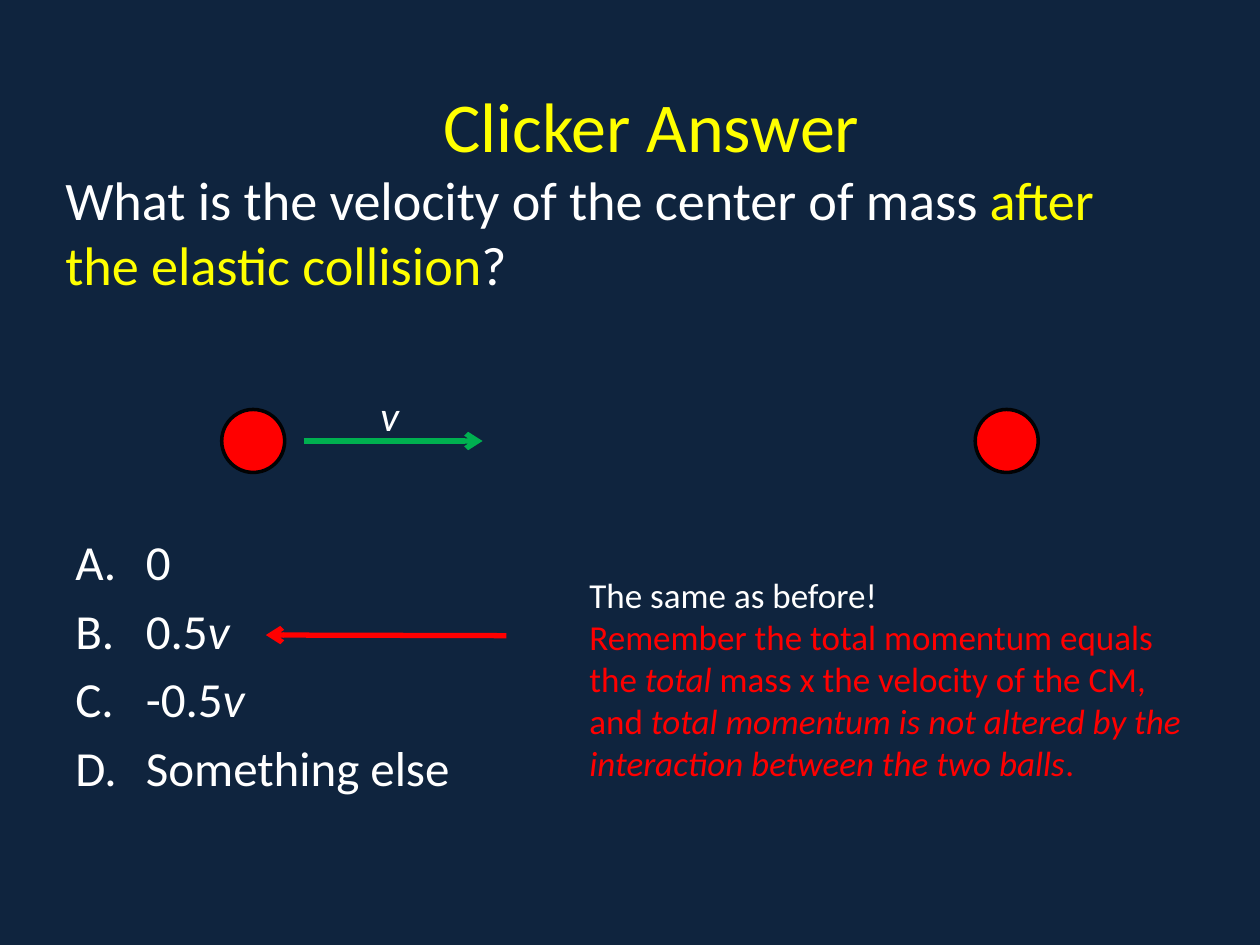
"""Build the clicker answer slide about centre-of-mass velocity."""
import dataclasses
import typing

import lxml.etree
import pptx
import pptx.dml.color
import pptx.enum.shapes
import pptx.enum.text
import pptx.oxml.ns
import pptx.util

COLUMNS, ROWS = 100, 75
WIDTH, HEIGHT = pptx.util.Inches(10), pptx.util.Inches(7.5)
FONT = "Calibri"
COLORS = {
    "background": "0F243E",
    "text": "FFFFFF",
    "highlight": "FFFF00",
    "red": "FF0000",
    "outline": "010203",
    "green": "00B050",
}


@dataclasses.dataclass(frozen=True)
class Box:
    column: float
    row: float
    columns: float
    rows: float


@dataclasses.dataclass(frozen=True)
class Arrow:
    start: tuple[float, float]
    end: tuple[float, float]
    color: str


@dataclasses.dataclass(frozen=True)
class Run:
    text: str
    color: str | None = None
    size: float | None = None
    italic: bool | None = None


@dataclasses.dataclass(frozen=True)
class Line:
    runs: tuple[Run, ...]
    size: float
    color: str = "text"
    indent: float = 0
    hanging: float = 0
    space_before: float = 0


BALLS = (Box(17.6, 32.5, 5, 5), Box(77.4, 32.5, 5, 5))
VELOCITY_ARROW = Arrow((24.1, 35), (38.3, 35), "green")
ANSWER_ARROW = Arrow((40.2, 50.45), (21.1, 50.4), "red")
TITLE = (
    Line(
        (
            Run("Clicker Answer\v", "highlight", 40),
            Run("What is the velocity of the center of mass "),
            Run("after the elastic collision", "highlight"),
            Run("?"),
        ),
        31,
        indent=30,
    ),
)
CHOICES = (
    (Run("0"),),
    (Run("0.5"), Run("v", italic=True)),
    (Run("-0.5"), Run("v", italic=True)),
    (Run("Something else"),),
)
EXPLANATION = (
    Line((Run("The same as before!"),), 20),
    Line(
        (
            Run("Remember the total momentum equals the "),
            Run("total ", italic=True),
            Run("mass x the velocity of the CM, and "),
            Run("total momentum is not altered by the interaction between the two balls", italic=True),
            Run("."),
        ),
        20,
        "red",
    ),
)


def across(columns: float) -> int:
    return round(WIDTH * columns / COLUMNS)


def down(rows: float) -> int:
    return round(HEIGHT * rows / ROWS)


def place(box: Box) -> tuple[int, int, int, int]:
    return across(box.column), down(box.row), across(box.columns), down(box.rows)


def color_of(name: str) -> pptx.dml.color.RGBColor:
    return pptx.dml.color.RGBColor.from_string(COLORS[name])


def add_text(shapes: typing.Any, box: Box, lines: tuple[Line, ...], middle: bool = False) -> None:
    frame = shapes.add_textbox(*place(box)).text_frame
    frame.word_wrap = True
    if middle:
        frame.vertical_anchor = pptx.enum.text.MSO_ANCHOR.MIDDLE
    for index, line in enumerate(lines):
        paragraph = frame.add_paragraph() if index else frame.paragraphs[0]
        paragraph.font.name = FONT
        paragraph.font.size = pptx.util.Pt(line.size)
        paragraph.font.color.rgb = color_of(line.color)
        paragraph.space_before = pptx.util.Pt(line.space_before)
        properties = paragraph._p.get_or_add_pPr()
        properties.set("marL", str(across(line.hanging)))
        properties.set("indent", str(across(line.indent - line.hanging)))
        if line.hanging:
            numbering = lxml.etree.SubElement(properties, pptx.oxml.ns.qn("a:buAutoNum"), type="alphaUcPeriod")
            properties.find(pptx.oxml.ns.qn("a:defRPr")).addprevious(numbering)
        for part in line.runs:
            run = paragraph.add_run()
            run.text = part.text.rstrip("\v")
            run.font.name = FONT
            run.font.size = pptx.util.Pt(part.size or line.size)
            run.font.color.rgb = color_of(part.color or line.color)
            run.font.italic = part.italic
            if part.text.endswith("\v"):
                paragraph.add_line_break()


def add_ball(shapes: typing.Any, box: Box) -> None:
    ball = shapes.add_shape(pptx.enum.shapes.MSO_SHAPE.OVAL, *place(box))
    ball.shadow.inherit = False
    ball.fill.solid()
    ball.fill.fore_color.rgb = color_of("red")
    ball.line.color.rgb = color_of("outline")
    ball.line.width = pptx.util.Pt(2)


def add_arrow(shapes: typing.Any, arrow: Arrow) -> None:
    (start_column, start_row), (end_column, end_row) = arrow.start, arrow.end
    connector = shapes.add_connector(
        pptx.enum.shapes.MSO_CONNECTOR.STRAIGHT,
        across(start_column), down(start_row), across(end_column), down(end_row),
    )
    connector.line.color.rgb = color_of(arrow.color)
    connector.line.width = pptx.util.Pt(3)
    lxml.etree.SubElement(connector.line._get_or_add_ln(), pptx.oxml.ns.qn("a:tailEnd"), type="arrow")
    lxml.etree.SubElement(connector._element.spPr, pptx.oxml.ns.qn("a:effectLst"))


def main() -> None:
    presentation = pptx.Presentation()
    presentation.slide_width, presentation.slide_height = WIDTH, HEIGHT
    slide = presentation.slides.add_slide(presentation.slide_layouts[6])
    slide.background.fill.solid()
    slide.background.fill.fore_color.rgb = color_of("background")

    choices = tuple(Line(runs, 28, hanging=5.6, space_before=5.6) for runs in CHOICES)
    add_text(slide.shapes, Box(4.2, 1.7, 90, 26.7), TITLE, middle=True)
    add_text(slide.shapes, Box(5, 41.7, 90, 29.2), choices)

    moving_ball = slide.shapes.add_group_shape().shapes
    add_ball(moving_ball, BALLS[0])
    add_arrow(moving_ball, VELOCITY_ARROW)
    add_text(moving_ball, Box(29.2, 30.4, 5, 5), (Line((Run("v", italic=True),), 24),))

    add_ball(slide.shapes, BALLS[1])
    add_arrow(slide.shapes, ANSWER_ARROW)
    add_text(slide.shapes, Box(45.8, 45, 50, 17.8), EXPLANATION)
    presentation.save("out.pptx")


if __name__ == "__main__":
    main()
